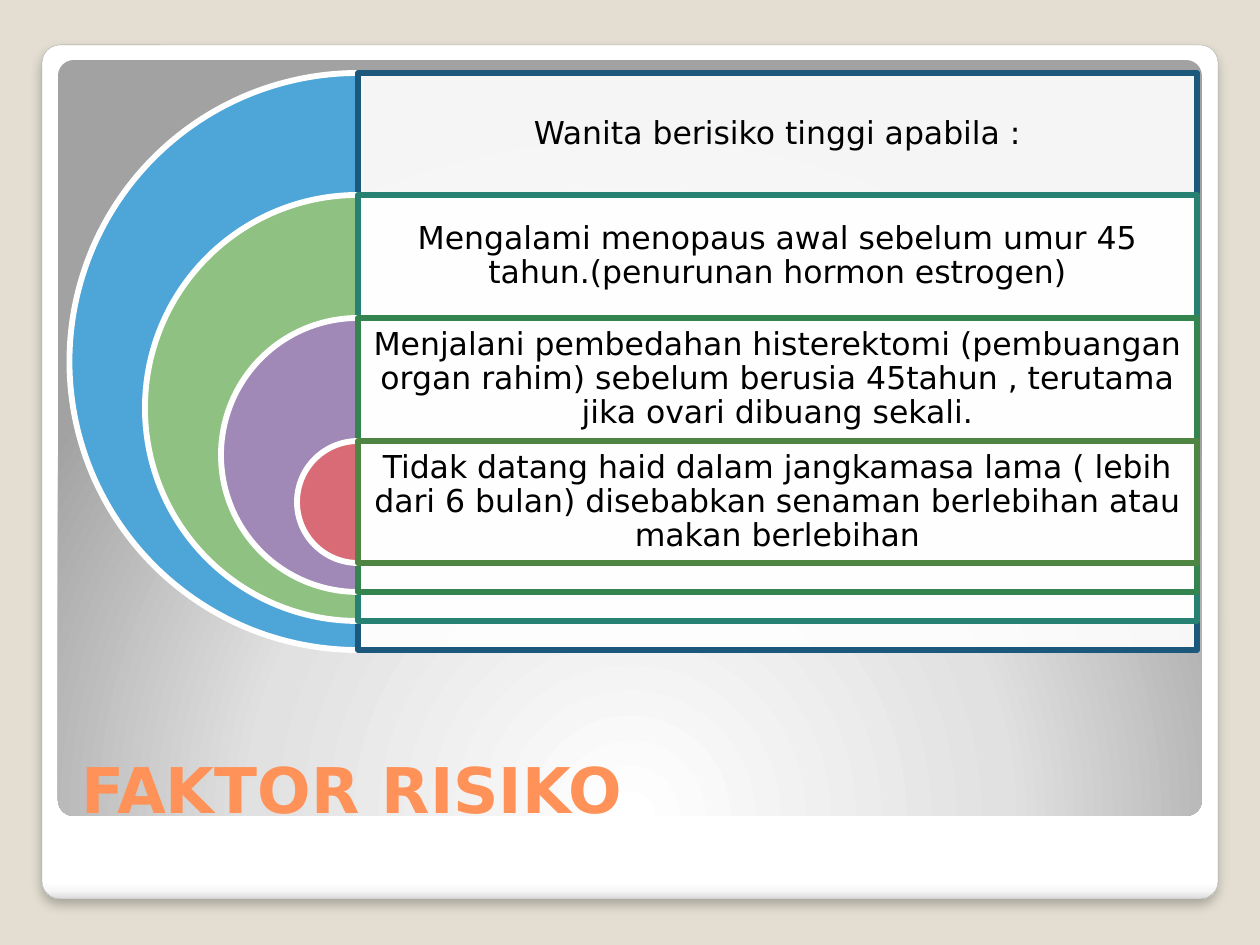
from lxml import etree
from pptx import Presentation
from pptx.dml.color import RGBColor
from pptx.enum.shapes import MSO_SHAPE
from pptx.enum.text import MSO_ANCHOR, PP_ALIGN
from pptx.oxml import parse_xml
from pptx.oxml.ns import nsdecls, qn
from pptx.util import Emu, Pt

PIE, RECT, ROUNDED = MSO_SHAPE.PIE, MSO_SHAPE.RECTANGLE, MSO_SHAPE.ROUNDED_RECTANGLE
MIDDLE, BOTTOM = MSO_ANCHOR.MIDDLE, MSO_ANCHOR.BOTTOM
CENTER, LEFT = PP_ALIGN.CENTER, PP_ALIGN.LEFT

WHITE = RGBColor(0xFF, 0xFF, 0xFF)
BLACK = RGBColor(0x00, 0x00, 0x00)
SAND = RGBColor(0xE3, 0xDE, 0xD1)
GREY = RGBColor(0xA4, 0xA4, 0xA4)
ORANGE = RGBColor(0xFF, 0x92, 0x58)

TITLE = "FAKTOR RISIKO"
RISKS = [
    ("Wanita berisiko tinggi apabila :",
     RGBColor(0x4E, 0xA5, 0xD8), RGBColor(0x1B, 0x58, 0x7C)),
    ("Mengalami menopaus awal sebelum umur 45 tahun.(penurunan hormon estrogen)",
     RGBColor(0x8E, 0xC1, 0x82), RGBColor(0x26, 0x81, 0x73)),
    ("Menjalani pembedahan histerektomi (pembuangan organ rahim) sebelum berusia "
     "45tahun , terutama jika ovari dibuang sekali.",
     RGBColor(0xA0, 0x88, 0xB7), RGBColor(0x33, 0x84, 0x4E)),
    ("Tidak datang haid dalam jangkamasa lama ( lebih dari 6 bulan) disebabkan "
     "senaman berlebihan atau makan berlebihan",
     RGBColor(0xD9, 0x6B, 0x77), RGBColor(0x4E, 0x85, 0x42)),
]
CARD_STOPS = [(0, "FFFFFF"), (98, "FFFFFF"), (99, "F7F7F7"), (100, "DADADA")]
PANEL_STOPS = [(0, "FFFFFF"), (55, "E1E1E1"), (100, "A2A2A2")]
DOWNWARD = '<a:lin ang="5400000" scaled="0"/>'
FROM_BELOW = ('<a:path path="circle"><a:fillToRect l="50000" t="175000" '
              'r="50000" b="-75000"/></a:path>')
CARD_SHADOW = (f'<a:effectLst {nsdecls("a")}><a:outerShdw blurRad="76200" dist="50800" '
               'dir="5400000" algn="tl" rotWithShape="0"><a:srgbClr val="000000">'
               '<a:alpha val="25000"/></a:srgbClr></a:outerShdw></a:effectLst>')

AXIS, BAR_WIDTH, BAND = 358, 839, 122
FIRST_TOP, TOP_RUN = 73, 368
FIRST_BOTTOM, BOTTOM_STEP = 650, 29
OUTLINE = 3.35


def px(length):
    """Convert pixels to EMU."""
    return Emu(round(length * 914400 / 126))


def assign(target, values):
    """Set every named attribute on the target."""
    for name, value in values.items():
        setattr(target, name, value)


def add_block(slide, kind, box, color, line_color=None, line_width=OUTLINE):
    """Add a filled preset shape without a shadow."""
    block = slide.shapes.add_shape(kind, *map(px, box))
    block.shadow.inherit = False
    block.fill.solid()
    block.fill.fore_color.rgb = color
    if line_color is None:
        block.line.fill.background()
    else:
        block.line.color.rgb = line_color
        block.line.width = Pt(line_width)
    return block


def set_gradient(block, stops, direction):
    """Replace the solid fill with a gradient."""
    marks = "".join(f'<a:gs pos="{pos * 1000}"><a:srgbClr val="{color}"/></a:gs>'
                    for pos, color in stops)
    solid = block._element.spPr.find(qn("a:solidFill"))
    solid.getparent().replace(solid, parse_xml(
        f'<a:gradFill {nsdecls("a")} rotWithShape="1"><a:gsLst>{marks}</a:gsLst>'
        f'{direction}</a:gradFill>'))


def add_words(slide, box, words, frame_format, paragraph_format, font_format):
    """Add a wrapped text box with one formatted paragraph."""
    frame = slide.shapes.add_textbox(*map(px, box)).text_frame
    assign(frame, {"word_wrap": True, **frame_format})
    paragraph = frame.paragraphs[0]
    assign(paragraph, paragraph_format)
    run = paragraph.add_run()
    run.text = words
    color = font_format["color"]
    assign(run.font, {"name": "DejaVu Sans", "size": Pt(font_format["size"]),
                      "bold": font_format["bold"]})
    run.font.color.rgb = color


def add_backdrop(slide):
    """Add the background, the card and the shaded panel."""
    slide.background.fill.solid()
    slide.background.fill.fore_color.rgb = SAND
    card = add_block(slide, ROUNDED, (42, 45, 1176, 854), WHITE, GREY, 0.16)
    panel = add_block(slide, ROUNDED, (58, 60, 1144, 756), WHITE)
    for block, stops, direction in ((card, CARD_STOPS, DOWNWARD),
                                    (panel, PANEL_STOPS, FROM_BELOW)):
        block.adjustments[0] = 0.021
        set_gradient(block, stops, direction)
    effects = card._element.spPr.find(qn("a:effectLst"))
    effects.getparent().replace(effects, parse_xml(CARD_SHADOW))


def add_risk(slide, index, words, pie_color, bar_color):
    """Add one nested half circle with its bar and wording."""
    top = FIRST_TOP + TOP_RUN * index // (len(RISKS) - 1)
    height = FIRST_BOTTOM - BOTTOM_STEP * index - top
    pie = add_block(slide, PIE, (AXIS - height / 2, top, height, height), pie_color, WHITE)
    pie.adjustments[0], pie.adjustments[1] = 54, 162
    bar = add_block(slide, RECT, (AXIS, top, BAR_WIDTH, height), WHITE, bar_color)
    bar_fill = bar._element.spPr.find(qn("a:solidFill"))
    etree.SubElement(bar_fill[0], qn("a:alpha"), val="90000")
    margins = {f"margin_{side}": px(9) for side in ("left", "top", "right", "bottom")}
    add_words(slide, (AXIS, top, BAR_WIDTH, BAND), words,
              {"vertical_anchor": MIDDLE, **margins},
              {"alignment": CENTER, "line_spacing": 0.9},
              {"size": 18, "bold": False, "color": BLACK})


def main():
    """Build the risk factor slide."""
    deck = Presentation()
    deck.slide_width, deck.slide_height = px(1260), px(945)
    slide = deck.slides.add_slide(deck.slide_layouts[6])
    add_backdrop(slide)
    add_words(slide, (69, 687, 1128, 145), TITLE, {"vertical_anchor": BOTTOM},
              {"alignment": LEFT}, {"size": 36, "bold": True, "color": ORANGE})
    for index, risk in enumerate(RISKS):
        add_risk(slide, index, *risk)
    deck.save("out.pptx")


if __name__ == "__main__":
    main()
